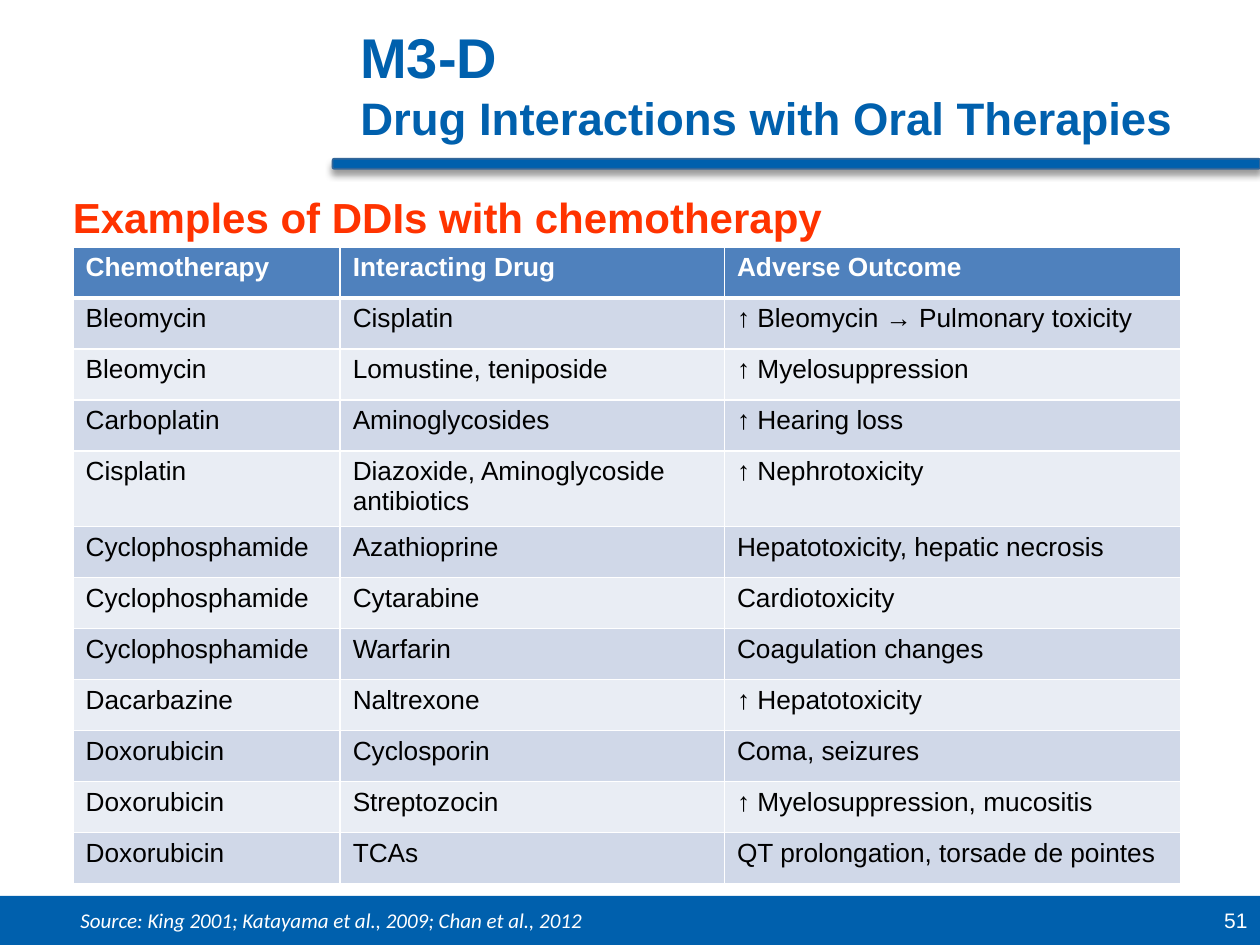
from lxml.etree import SubElement
from pptx import Presentation
from pptx.dml.color import RGBColor
from pptx.enum.shapes import MSO_SHAPE
from pptx.enum.text import MSO_ANCHOR, MSO_AUTO_SIZE, PP_ALIGN
from pptx.oxml import parse_xml
from pptx.oxml.ns import nsdecls, qn
from pptx.util import Inches, Pt

BLUE = RGBColor(0x00, 0x60, 0xAD)
EDGE_BLUE = RGBColor(0x33, 0x66, 0x99)
HEADER_BLUE = RGBColor(0x4F, 0x81, 0xBD)
BAND_DARK = RGBColor(0xD0, 0xD8, 0xE8)
BAND_LIGHT = RGBColor(0xE9, 0xED, 0xF4)
RED = RGBColor(0xFF, 0x33, 0x00)
WHITE = RGBColor(0xFF, 0xFF, 0xFF)
BLACK = RGBColor(0x00, 0x00, 0x00)

COLUMN_WIDTHS = [2.12, 3.05, 3.62]
ROW_HEIGHT = 0.405
TALL_ROW, TALL_HEIGHT = 4, 0.6
INTERACTIONS = [
    ("Chemotherapy", "Interacting Drug", "Adverse Outcome"),
    ("Bleomycin", "Cisplatin", "↑ Bleomycin → Pulmonary toxicity"),
    ("Bleomycin", "Lomustine, teniposide", "↑ Myelosuppression"),
    ("Carboplatin", "Aminoglycosides", "↑ Hearing loss"),
    ("Cisplatin", "Diazoxide, Aminoglycoside antibiotics", "↑ Nephrotoxicity"),
    ("Cyclophosphamide", "Azathioprine", "Hepatotoxicity, hepatic necrosis"),
    ("Cyclophosphamide", "Cytarabine", "Cardiotoxicity"),
    ("Cyclophosphamide", "Warfarin", "Coagulation changes"),
    ("Dacarbazine", "Naltrexone", "↑ Hepatotoxicity"),
    ("Doxorubicin", "Cyclosporin", "Coma, seizures"),
    ("Doxorubicin", "Streptozocin", "↑ Myelosuppression, mucositis"),
    ("Doxorubicin", "TCAs", "QT prolongation, torsade de pointes"),
]


def format_font(font, color, **values):
    """Set the colour and the given values of a font."""
    for name, value in {"name": "Arial", **values}.items():
        setattr(font, name, value)
    font.color.rgb = color


def add_text(page, box, text, color, anchor=MSO_ANCHOR.MIDDLE,
             align=PP_ALIGN.LEFT, **values):
    """Add a one-paragraph text box."""
    frame = page.shapes.add_textbox(*map(Inches, box)).text_frame
    frame.word_wrap = True
    frame.vertical_anchor = anchor
    para = frame.paragraphs[0]
    para.alignment = align
    span = para.add_run()
    span.text = text
    format_font(span.font, color, **values)


def add_bar(page, box, kind):
    """Add a solid blue bar without outline or shadow."""
    bar = page.shapes.add_shape(kind, *map(Inches, box))
    bar.shadow.inherit = False
    bar.fill.solid()
    bar.fill.fore_color.rgb = BLUE
    bar.line.fill.background()
    return bar


def add_title(page, box):
    """Place the two-line title in its placeholder."""
    title = page.shapes.title
    title.left, title.top, title.width, title.height = map(Inches, box)
    frame = title.text_frame
    frame.auto_size = MSO_AUTO_SIZE.NONE
    frame.word_wrap = True
    frame.vertical_anchor = MSO_ANCHOR.MIDDLE
    para = frame.paragraphs[0]
    para.alignment = PP_ALIGN.LEFT
    para.text = "M3-D\vDrug Interactions with Oral Therapies"
    for span, size in zip(para.runs, (32, 26)):
        format_font(span.font, BLUE, size=Pt(size), bold=True)


def add_title_rule(page, box):
    """Add the shadowed rule under the title."""
    rule = add_bar(page, box, MSO_SHAPE.ROUNDED_RECTANGLE)
    rule.line.color.rgb = EDGE_BLUE
    rule.line.width = Pt(1)
    effects = rule._element.spPr.find(qn("a:effectLst"))
    effects.append(parse_xml(
        f'<a:outerShdw {nsdecls("a")} blurRad="{Pt(4)}" dist="{Pt(3)}" '
        'dir="5400000" rotWithShape="0"><a:srgbClr val="000000">'
        '<a:alpha val="40000"/></a:srgbClr></a:outerShdw>'))


def set_borders(cell, top, bottom):
    """Give a cell white borders, with top and bottom widths in points."""
    properties = cell._tc.get_or_add_tcPr()
    for side, width in {"L": 1, "R": 1, "T": top, "B": bottom}.items():
        line = SubElement(properties, qn(f"a:ln{side}"), w=str(Pt(width)))
        fill = SubElement(line, qn("a:solidFill"))
        SubElement(fill, qn("a:srgbClr"), val=str(WHITE))


def add_interaction_table(page, box):
    """Add the table of drug interactions."""
    table = page.shapes.add_table(
        len(INTERACTIONS), len(COLUMN_WIDTHS), *map(Inches, box)).table
    for column, width in zip(table.columns, COLUMN_WIDTHS):
        column.width = Inches(width)
    for index, texts in enumerate(INTERACTIONS):
        header = index == 0
        band = HEADER_BLUE if header else (BAND_LIGHT, BAND_DARK)[index % 2]
        table.rows[index].height = Inches(
            TALL_HEIGHT if index == TALL_ROW else ROW_HEIGHT)
        for cell, text in zip(table.rows[index].cells, texts):
            set_borders(cell, top=3 if index == 1 else 1, bottom=3 if header else 1)
            cell.fill.solid()
            cell.fill.fore_color.rgb = band
            cell.text = text
            format_font(cell.text_frame.paragraphs[0].runs[0].font,
                        WHITE if header else BLACK, size=Pt(15), bold=header)


def add_footer(page, box):
    """Add the footer band with the source and the page number."""
    left, top, width, height = box
    add_bar(page, box, MSO_SHAPE.RECTANGLE)
    add_text(page, (left + 0.54, top + 0.04, 7.66, 0.3),
             "Source: King 2001; Katayama et al., 2009; Chan et al., 2012",
             WHITE, MSO_ANCHOR.TOP, name="Calibri", size=Pt(12), italic=True)
    add_text(page, (left + width - 2.33, top, 2.33, height), "51", WHITE,
             align=PP_ALIGN.RIGHT, size=Pt(12))


def main():
    """Build and save the slide."""
    deck = Presentation()
    deck.slide_width, deck.slide_height = Inches(10), Inches(7.5)
    page = deck.slides.add_slide(deck.slide_layouts.get_by_name("Title Only"))
    add_footer(page, (0, 7.11, 10, 0.39))
    add_title_rule(page, (2.64, 1.26, 7.36, 0.08))
    add_title(page, (2.76, 0.17, 7.24, 0.99))
    add_text(page, (0.48, 1.42, 8.88, 0.6), "Examples of DDIs with chemotherapy",
             RED, size=Pt(24), bold=True)
    add_interaction_table(page, (0.58, 1.96, 8.8, 5.06))
    deck.save("out.pptx")


if __name__ == "__main__":
    main()
